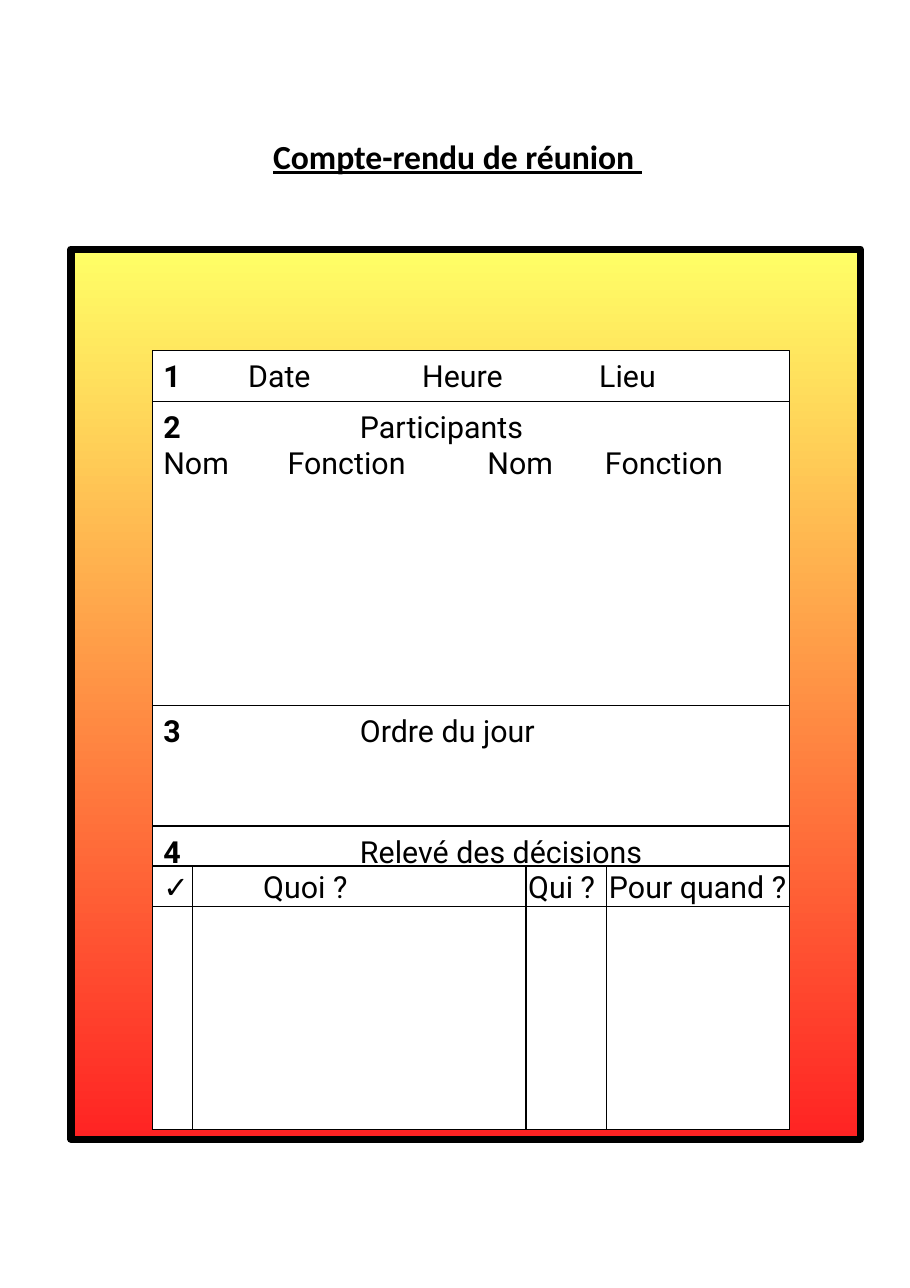
from pptx import Presentation
from pptx.dml.color import RGBColor
from pptx.enum.shapes import MSO_SHAPE
from pptx.enum.text import MSO_ANCHOR, MSO_AUTO_SIZE, PP_ALIGN
from pptx.oxml.ns import qn
from pptx.util import Cm, Pt
from lxml import etree

RECT = MSO_SHAPE.RECTANGLE
TOP = MSO_ANCHOR.TOP
FIXED = MSO_AUTO_SIZE.NONE
LEFT, CENTER = PP_ALIGN.LEFT, PP_ALIGN.CENTER

COLORS = {"ink": "000000", "paper": "FFFFFF", "sun": "FFFF66", "fire": "FF2323"}

# Form geometry, in cm
FORM_X, FORM_Y, FORM_W = 3.43, 7.9, 14.35
HEAD_Y, HEAD_H, FORM_END = 19.5, 0.91, 25.43

# Height, then lines of (number, labels, tab stops in cm)
SECTIONS = [
    (1.14, [("1", ["Date", "Heure", "Lieu"], [1.91, 5.83, 9.82])]),
    (6.84, [("2", ["Participants"], [4.43]),
            ("", ["Nom", "Fonction", "Nom", "Fonction"], [2.8, 7.3, 9.95])]),
    (2.72, [("3", ["Ordre du jour"], [4.43])]),
    (6.83, [("4", ["Relevé des décisions"], [4.43])]),
]

# Width, header, left inset in cm
COLUMNS = [(0.9, "✓", 0.25), (7.52, "Quoi ?", 1.6),
           (1.82, "Qui ?", 0.05), (4.11, "Pour quand ?", 0.05)]


def rgb(name):
    return RGBColor.from_string(COLORS[name])


def add_box(slide, x, y, w, h, fill=None, line=0.75):
    box = slide.shapes.add_shape(RECT, Cm(x), Cm(y), Cm(w), Cm(h))
    box.shadow.inherit = False
    if fill:
        box.fill.solid()
        box.fill.fore_color.rgb = rgb(fill)
    else:
        box.fill.background()
    box.line.color.rgb = rgb("ink")
    box.line.width = Pt(line)
    return box


def set_frame(frame, left, top, right=0):
    frame.word_wrap = True
    frame.auto_size = FIXED
    frame.vertical_anchor = TOP
    frame.margin_left, frame.margin_right = Cm(left), Cm(right)
    frame.margin_top, frame.margin_bottom = Cm(top), 0


def set_font(par, name, size, align):
    par.alignment = align
    par.font.name = name
    par.font.size = Pt(size)
    par.font.color.rgb = rgb("ink")


def set_tabs(par, stops):
    tabs = etree.SubElement(par._p.get_or_add_pPr(), qn("a:tabLst"))
    for stop in stops:
        etree.SubElement(tabs, qn("a:tab"), pos=str(Cm(stop)), algn="l")


def add_title(slide, text):
    title = slide.shapes.title
    title.left, title.top = Cm(1.65), Cm(2.87)
    title.width, title.height = Cm(17.32), Cm(8.66)
    set_frame(title.text_frame, 0.18, 0.18, 0.18)
    title.text_frame.text = text
    par = title.text_frame.paragraphs[0]
    set_font(par, "Calibri", 21.5, CENTER)
    par.font.bold = par.font.underline = True


def add_frame(slide):
    frame = add_box(slide, 1.6, 5.61, 17.78, 20.04, line=4.5)
    frame.fill.gradient()
    frame.fill.gradient_angle = 270
    for stop, place, name in zip(frame.fill.gradient_stops, (0, 1), ("sun", "fire")):
        stop.position = place
        stop.color.rgb = rgb(name)


def add_section(slide, y, h, lines):
    box = add_box(slide, FORM_X, y, FORM_W, h, "paper")
    frame = box.text_frame
    set_frame(frame, 0.25, 0.15)
    for i, (number, labels, stops) in enumerate(lines):
        par = frame.add_paragraph() if i else frame.paragraphs[0]
        set_tabs(par, stops)
        set_font(par, "Roboto", 19.4, LEFT)
        text = "\t".join(labels)
        if number:
            run = par.add_run()
            run.text = number
            run.font.bold = True
            text = "\t" + text
        par.add_run().text = text


def add_column(slide, x, w, head, inset):
    box = add_box(slide, x, HEAD_Y, w, FORM_END - HEAD_Y)
    set_frame(box.text_frame, inset, 0.05)
    box.text_frame.text = head
    set_font(box.text_frame.paragraphs[0], "Roboto", 19.4, LEFT)


def main():
    deck = Presentation()
    deck.slide_width, deck.slide_height = Cm(20.5), Cm(29.0)
    slide = deck.slides.add_slide(deck.slide_layouts[5])

    # Title and coloured frame
    add_title(slide, "Compte-rendu de réunion ")
    add_frame(slide)

    # Numbered sections, stacked
    y = FORM_Y
    for h, lines in SECTIONS:
        add_section(slide, y, h, lines)
        y += h

    # Decision grid
    add_box(slide, FORM_X, HEAD_Y, FORM_W, HEAD_H)
    x = FORM_X
    for w, head, inset in COLUMNS:
        add_column(slide, x, w, head, inset)
        x += w

    deck.save("out.pptx")


if __name__ == "__main__":
    main()
